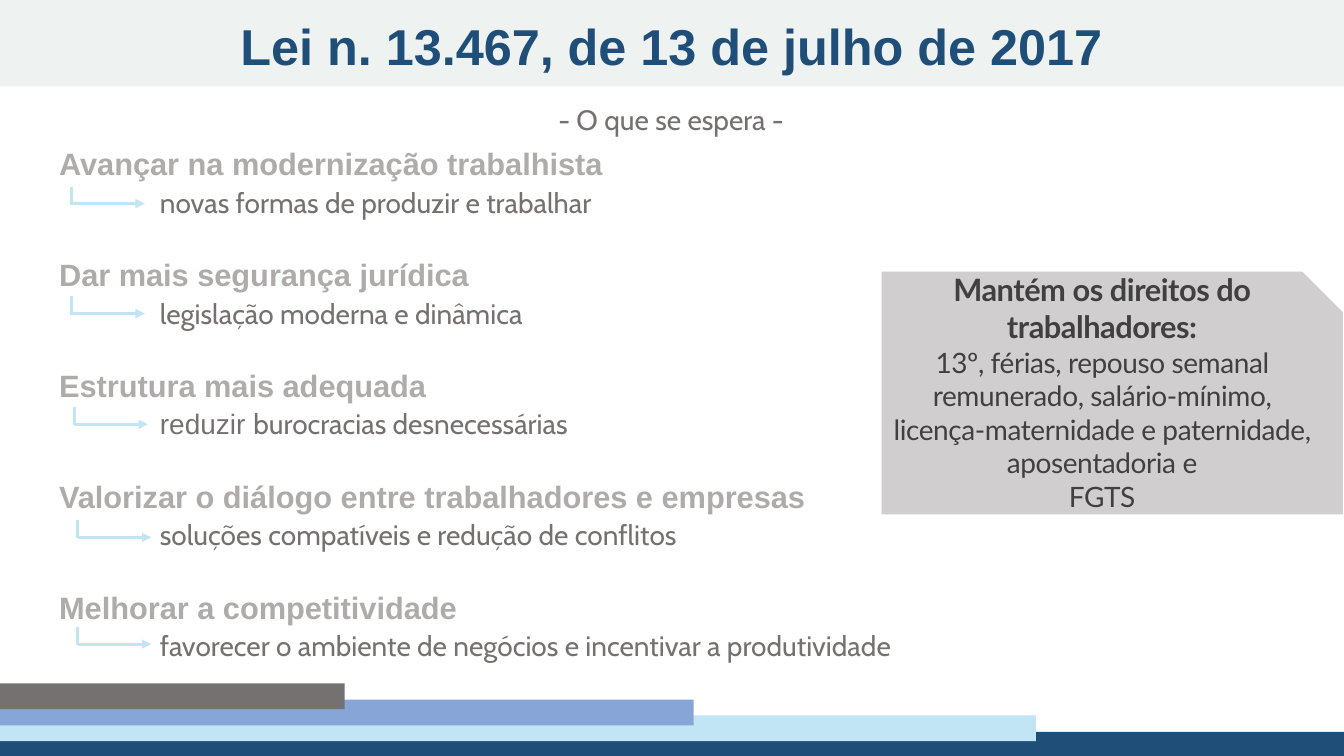
from lxml import etree
from pptx import Presentation
from pptx.dml.color import RGBColor
from pptx.enum.shapes import MSO_CONNECTOR, MSO_SHAPE
from pptx.enum.text import MSO_ANCHOR, PP_ALIGN
from pptx.oxml.ns import qn
from pptx.util import Cm, Pt

RECTANGLE, SNIPPED = MSO_SHAPE.RECTANGLE, MSO_SHAPE.SNIP_1_RECTANGLE
STRAIGHT = MSO_CONNECTOR.STRAIGHT
MIDDLE = MSO_ANCHOR.MIDDLE
CENTER, LEFT = PP_ALIGN.CENTER, PP_ALIGN.LEFT

THEME = {
    "navy": RGBColor.from_string("1F4E79"),
    "sky": RGBColor.from_string("C2E5F6"),
    "periwinkle": RGBColor.from_string("87A5D7"),
    "gray": RGBColor.from_string("767171"),
    "light_gray": RGBColor.from_string("AFABAB"),
    "dark_gray": RGBColor.from_string("404040"),
    "band": RGBColor.from_string("EEF2F0"),
    "callout": RGBColor.from_string("D0CECE"),
    "white": RGBColor.from_string("FFFFFF"),
    "title_size": Pt(36), "heading_size": Pt(22), "body_size": Pt(20),
}


def text_style(font, size, color, bold=False):
    return {"name": font, "size": THEME[size], "color": THEME[color], "bold": bold}


TITLE = text_style("Arial", "title_size", "navy", True)
SUBTITLE = text_style("Cabin", "body_size", "gray")
HEADING = text_style("Arial", "heading_size", "light_gray", True)
DETAIL = text_style("Cabin", "body_size", "gray")
DETAIL_ARIAL = text_style("Arial", "body_size", "gray")
CALLOUT_HEADING = text_style("Lato", "heading_size", "dark_gray", True)
CALLOUT_BODY = text_style("Lato", "body_size", "dark_gray")


def write(text_frame, paragraphs, align):
    """Fill a frame with paragraphs, each a list of (text, style) runs."""
    text_frame.word_wrap = True
    for index, runs in enumerate(paragraphs):
        paragraph = text_frame.add_paragraph() if index else text_frame.paragraphs[0]
        paragraph.alignment = align
        for text, style in runs:
            run = paragraph.add_run()
            run.text = text
            for attribute, value in style.items():
                if attribute == "color":
                    run.font.color.rgb = value
                else:
                    setattr(run.font, attribute, value)


presentation = Presentation()
presentation.slide_width, presentation.slide_height = Cm(33.87), Cm(19.05)
slide = presentation.slides.add_slide(presentation.slide_layouts[6])
shapes = slide.shapes

# Footer steps and title band: top, width, height, colour
BANDS = [
    (18.44, 33.87, 0.65, "navy"),
    (18.03, 26.11, 0.65, "sky"),
    (17.63, 17.48, 0.65, "periwinkle"),
    (17.22, 8.69, 0.65, "gray"),
    (0, 33.87, 2.18, "band"),
]
for top, width, height, color in BANDS:
    band = shapes.add_shape(RECTANGLE, 0, Cm(top), Cm(width), Cm(height))
    band.shadow.inherit = False
    band.fill.solid()
    band.fill.fore_color.rgb = THEME[color]
    band.line.fill.background()

# Title and subtitle
title = shapes.add_textbox(Cm(1.4), Cm(0.25), Cm(31.06), Cm(1.8))
write(title.text_frame, [[("Lei n. 13.467, de 13 de julho de 2017", TITLE)]], CENTER)
subtitle = shapes.add_textbox(Cm(2.54), Cm(2.46), Cm(28.75), Cm(1.12))
write(subtitle.text_frame, [[("- O que se espera -", SUBTITLE)]], CENTER)

# Expectations: heading, detail runs, corner of its arrow
EXPECTATIONS = [
    ("Avançar na modernização trabalhista",
     [("novas formas de produzir e trabalhar", DETAIL)], (1.8, 5.13)),
    ("Dar mais segurança jurídica",
     [("legislação moderna e dinâmica", DETAIL)], (1.8, 7.9)),
    ("Estrutura mais adequada",
     [("reduzir ", DETAIL_ARIAL), ("burocracias desnecessárias", DETAIL)], (1.88, 10.69)),
    ("Valorizar o diálogo entre trabalhadores e empresas",
     [("soluções compatíveis e redução de conflitos", DETAIL)], (1.96, 13.54)),
    ("Melhorar a competitividade",
     [("favorecer o ambiente de negócios e incentivar a produtividade", DETAIL)],
     (1.96, 16.23)),
]
LINE_PITCH = Pt(26.4)
expectation_list = shapes.add_textbox(Cm(1.24), Cm(3.53), Cm(31), Cm(13.4))
paragraphs = []
for heading, detail, corner in EXPECTATIONS:
    paragraphs += [[(heading, HEADING)], detail]
write(expectation_list.text_frame, paragraphs, LEFT)
for index, paragraph in enumerate(expectation_list.text_frame.paragraphs):
    paragraph.line_spacing = LINE_PITCH
    if index % 2:
        paragraph_properties = paragraph._p.get_or_add_pPr()
        paragraph_properties.set("marL", str(Cm(2.54)))
        paragraph_properties.set("indent", "0")
    elif index:
        paragraph.space_before = LINE_PITCH

# Arrows: a horizontal arrow and a short stem above its start
for heading, detail, (x, y) in EXPECTATIONS:
    segments = [(x, y, x + 1.85, y, True), (x, y - 0.43, x, y + 0.03, False)]
    for x1, y1, x2, y2, has_head in segments:
        connector = shapes.add_connector(STRAIGHT, Cm(x1), Cm(y1), Cm(x2), Cm(y2))
        connector.line.color.rgb = THEME["sky"]
        connector.line.width = Pt(2.25)
        if has_head:
            line_properties = connector.line._get_or_add_ln()
            etree.SubElement(line_properties, qn("a:tailEnd"), type="triangle")
        etree.SubElement(connector._element.spPr, qn("a:effectLst"))

# Callout with the rights that remain
callout = shapes.add_shape(SNIPPED, Cm(22.2), Cm(6.83), Cm(11.66), Cm(6.15))
callout.shadow.inherit = False
callout.fill.solid()
callout.fill.fore_color.rgb = THEME["callout"]
callout.line.color.rgb = THEME["white"]
callout.line.width = Pt(1)
CALLOUT_FRAME = {"vertical_anchor": MIDDLE, "margin_top": 0, "margin_bottom": Cm(0.56)}
for attribute, value in CALLOUT_FRAME.items():
    setattr(callout.text_frame, attribute, value)
write(callout.text_frame, [
    [("Mantém os direitos do trabalhadores:", CALLOUT_HEADING)],
    [("13º, férias, repouso semanal remunerado, salário-mínimo, "
      "licença-maternidade e paternidade, aposentadoria e", CALLOUT_BODY)],
    [("FGTS", CALLOUT_BODY)],
], CENTER)
for paragraph in callout.text_frame.paragraphs:
    for run in paragraph.runs:
        run._r.get_or_add_rPr().set("spc", "-30")

presentation.save("out.pptx")
